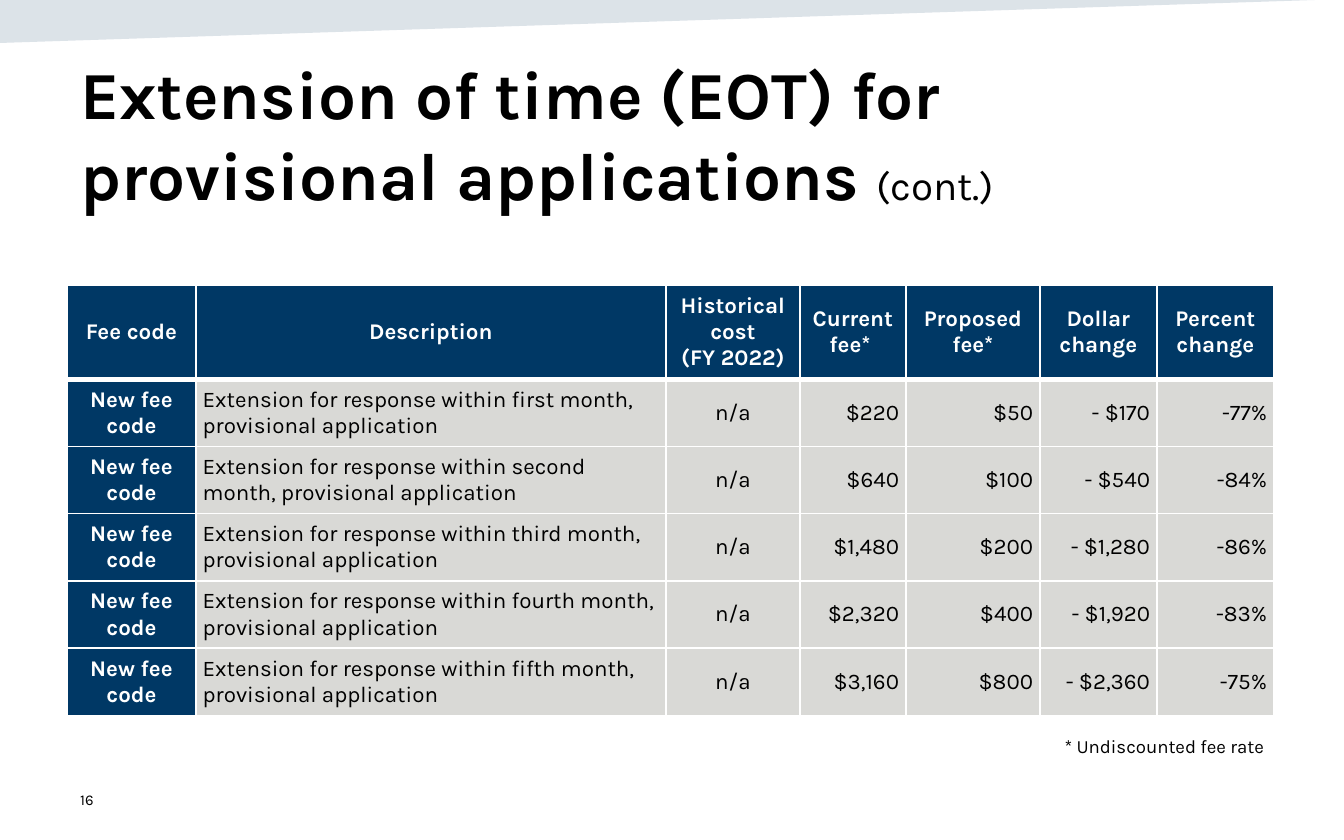
import pptx
import pptx.dml.color
import pptx.enum.text
import pptx.oxml
import pptx.oxml.ns
import pptx.util

NAVY = pptx.dml.color.RGBColor(0x00, 0x38, 0x65)
BAND = pptx.dml.color.RGBColor(0x16, 0x44, 0x69)
GRAY = pptx.dml.color.RGBColor(0xD9, 0xD9, 0xD6)
WHITE = pptx.dml.color.RGBColor(0xFF, 0xFF, 0xFF)
BLACK = pptx.dml.color.RGBColor(0x00, 0x00, 0x00)
LEFT = pptx.enum.text.PP_ALIGN.LEFT
CENTER = pptx.enum.text.PP_ALIGN.CENTER
RIGHT = pptx.enum.text.PP_ALIGN.RIGHT
MIDDLE = pptx.enum.text.MSO_ANCHOR.MIDDLE
TOP = pptx.enum.text.MSO_ANCHOR.TOP
PX = 914400 / 134.4


def px(*lengths):
    return [pptx.util.Emu(round(length * PX)) for length in lengths]


def write(frame, text, size=12, color=BLACK, bold=False, align=LEFT,
          anchor=MIDDLE, space=0, tail="", tail_size=12):
    frame.word_wrap = True
    frame.vertical_anchor = anchor
    for number, line in enumerate(text.split("\n")):
        paragraph = frame.add_paragraph() if number else frame.paragraphs[0]
        paragraph.alignment = align
        paragraph.space_before = paragraph.space_after = pptx.util.Pt(space)
        pieces = [(line, size, bold)]
        if tail:
            pieces.append((tail, tail_size, False))
        for words, points, heavy in pieces:
            run = paragraph.add_run()
            run.text = words
            run.font.name = "Karla"
            run.font.size = pptx.util.Pt(points)
            run.font.bold = heavy
            run.font.color.rgb = color


deck = pptx.Presentation()
deck.slide_width, deck.slide_height = px(1344, 840)
slide = deck.slides.add_slide(deck.slide_layouts[6])

outline = slide.shapes.build_freeform(0, 0, scale=PX)
outline.add_line_segments([(0, 43), (1347, -1)], close=True)
top_band = outline.convert_to_shape()
top_band.shadow.inherit = False
top_band.line.fill.background()
top_band.fill.solid()
top_band.fill.fore_color.rgb = BAND
band_color = top_band.fill._xPr.find(".//" + pptx.oxml.ns.qn("a:srgbClr"))
band_color.append(pptx.oxml.parse_xml(
    f'<a:alpha {pptx.oxml.ns.nsdecls("a")} val="15000"/>'))

page_number = slide.shapes.add_textbox(*px(67, 778, 302, 44))
write(page_number.text_frame, "16", size=8)

title = slide.shapes.add_textbox(*px(67, 46, 1210, 128))
write(title.text_frame, "Extension of time (EOT) for provisional applications ",
      size=36, bold=True, anchor=TOP, tail="(cont.)", tail_size=21.6)

headings = ["Fee code", "Description", "Historical cost\n(FY 2022)", "Current fee* ",
            "Proposed fee*", "Dollar change", "Percent change"]
fees = [
    ("first", "$220", "$50", "- $170", "-77%"),
    ("second", "$640", "$100", "- $540", "-84%"),
    ("third", "$1,480", "$200", "- $1,280", "-86%"),
    ("fourth", "$2,320", "$400", "- $1,920", "-83%"),
    ("fifth", "$3,160", "$800", "- $2,360", "-75%"),
]
rows = [headings] + [
    ["New fee code", f"Extension for response within {month} month, provisional application",
     "n/a", *amounts] for month, *amounts in fees]
widths = px(129, 470, 134, 106, 134, 117, 117)
heights = px(91, *[66] * len(fees))
aligns = [CENTER, LEFT, CENTER, RIGHT, RIGHT, RIGHT, RIGHT]

fee_table = slide.shapes.add_table(
    len(rows), len(headings), *px(67, 285), sum(widths), sum(heights)).table
for column, width in zip(fee_table.columns, widths):
    column.width = width
for row, height in zip(fee_table.rows, heights):
    row.height = height

for r, values in enumerate(rows):
    for c, value in enumerate(values):
        cell = fee_table.cell(r, c)
        heading = r == 0 or c == 0
        cell.margin_left = cell.margin_right = pptx.util.Inches(0.05)
        cell.margin_top = cell.margin_bottom = pptx.util.Inches(0.05)
        cell.vertical_anchor = MIDDLE
        write(cell.text_frame, value, bold=heading, color=WHITE if heading else BLACK,
              align=CENTER if r == 0 else aligns[c], space=6 if r else 0)
        properties = cell._tc.get_or_add_tcPr()
        for side in ("lnL", "lnR", "lnT", "lnB"):
            thick = (r, side) in ((0, "lnB"), (1, "lnT"))
            properties.append(pptx.oxml.parse_xml(
                f'<a:{side} {pptx.oxml.ns.nsdecls("a")} w="{pptx.util.Pt(3 if thick else 1)}">'
                f'<a:solidFill><a:srgbClr val="{WHITE}"/></a:solidFill></a:{side}>'))
        cell.fill.solid()
        cell.fill.fore_color.rgb = NAVY if heading else GRAY

footnote = slide.shapes.add_textbox(*px(996, 728, 281, 36))
write(footnote.text_frame, "* Undiscounted fee rate", size=10, align=RIGHT, anchor=TOP)

deck.save("out.pptx")
